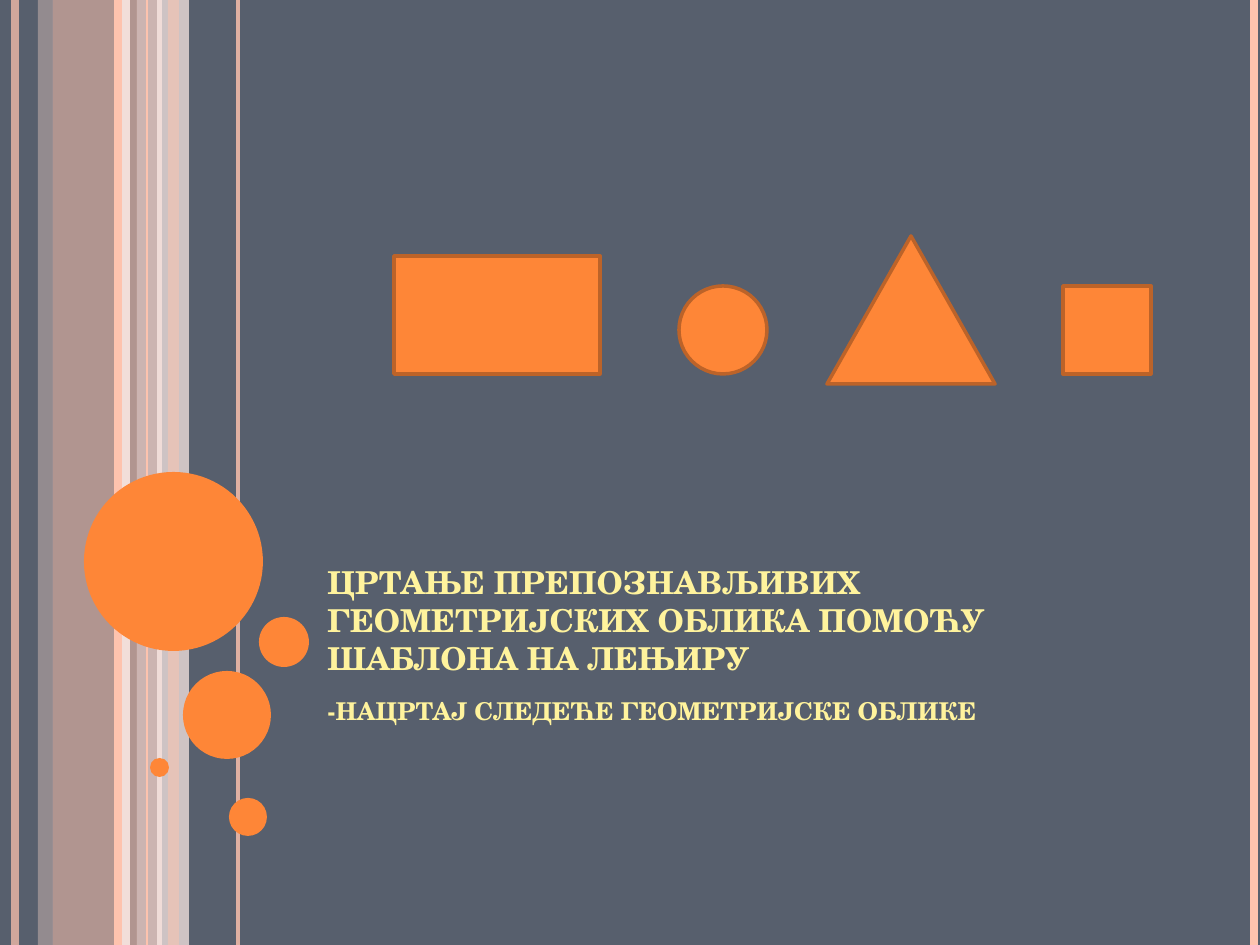
from dataclasses import dataclass
from lxml import etree
from pptx import Presentation
from pptx import util as u
from pptx.dml.color import RGBColor
from pptx.enum import shapes, text
from pptx.oxml.ns import qn

SCALE = 914400 // 126
WIDE, HIGH = 1260, 945
KIND = shapes.MSO_SHAPE


@dataclass(frozen=True)
class Theme:
    back: str = "575F6D"
    rose: str = "FEC3AE"
    blush: str = "FFD9CE"
    pale: str = "FFEDE8"
    orange: str = "FE8637"
    edge: str = "BC6329"
    cream: str = "FFF39D"
    font: str = "TeX Gyre Schola"
    title: int = 18
    body: int = 14


THEME = Theme()


def px(*vals):
    return [u.Emu(v * SCALE) for v in vals]


def paint(fill, color, alpha=100):
    fill.solid()
    fill.fore_color.rgb = RGBColor.from_string(color)
    if alpha < 100:
        tint = fill._xPr.find(".//" + qn("a:srgbClr"))
        etree.SubElement(tint, qn("a:alpha"), val=str(alpha * 1000))


def add_form(slide, kind, box, color, alpha=100, edge=None):
    form = slide.shapes.add_shape(kind, *px(*box))
    form.shadow.inherit = False
    paint(form.fill, color, alpha)
    if edge:
        form.line.width = u.Pt(2)
        paint(form.line.fill, edge)
    else:
        form.line.fill.background()


def add_band(slide, left, width, color, alpha):
    add_form(slide, KIND.RECTANGLE, (left, 0, width, HIGH), color, alpha)


def add_dot(slide, left, top, size):
    add_form(slide, KIND.OVAL, (left, top, size, size), THEME.orange)


def add_rule(slide, x, color, width, alpha=100):
    rule = slide.shapes.add_connector(
        shapes.MSO_CONNECTOR.STRAIGHT, *px(x, 0, x, HIGH))
    rule.line.width = u.Pt(width)
    paint(rule.line.fill, color, alpha)
    etree.SubElement(rule._element.spPr, qn("a:effectLst"))


def add_text(slide, words, box, size, anchor="TOP", before=0):
    frame = slide.shapes.add_textbox(*px(*box)).text_frame
    frame.word_wrap = True
    frame.vertical_anchor = text.MSO_ANCHOR[anchor]
    para = frame.paragraphs[0]
    para.space_before = u.Pt(before)
    run = para.add_run()
    run.text = words
    run.font.name = THEME.font
    run.font.size = u.Pt(size)
    run.font.bold = True
    run.font.color.rgb = RGBColor.from_string(THEME.cream)


def add_decor(slide):
    for band in (
        (53, 84, THEME.rose, 54),
        (38, 15, THEME.blush, 36),
        (137, 25, THEME.blush, 70),
        (157, 32, THEME.pale, 71),
    ):
        add_band(slide, *band)
    for rule in (
        (15, THEME.rose, 4.5, 73),
        (126, THEME.pale, 4.5, 83),
        (118, THEME.rose, 4.5),
        (238, THEME.rose, 2.25, 82),
        (147, THEME.rose, 0.75),
    ):
        add_rule(slide, *rule)
    add_band(slide, 168, 11, THEME.rose, 51)
    for dot in (
        (84, 472, 179),
        (183, 671, 88),
        (150, 758, 19),
        (229, 798, 38),
        (259, 617, 50),
    ):
        add_dot(slide, *dot)
    add_rule(slide, 1254, THEME.rose, 4.5)


def add_forms(slide):
    for kind, box in (
        (KIND.RECTANGLE, (394, 256, 206, 118)),
        (KIND.ISOSCELES_TRIANGLE, (827, 236, 168, 148)),
        (KIND.FLOWCHART_PROCESS, (1063, 286, 88, 88)),
        (KIND.OVAL, (679, 286, 88, 88)),
    ):
        add_form(slide, kind, box, THEME.orange, edge=THEME.edge)


def main():
    deck = Presentation()
    deck.slide_width, deck.slide_height = px(WIDE, HIGH)
    slide = deck.slides.add_slide(deck.slide_layouts[6])
    paint(slide.background.fill, THEME.back)
    add_decor(slide)
    add_text(
        slide,
        "ЦРТАЊЕ ПРЕПОЗНАВЉИВИХ ГЕОМЕТРИЈСКИХ ОБЛИКА ПОМОЋУ ШАБЛОНА НА ЛЕЊИРУ",
        (315, 399, 851, 284), size=THEME.title, anchor="BOTTOM")
    add_text(
        slide, "-НАЦРТАЈ СЛЕДЕЋЕ ГЕОМЕТРИЈСКЕ ОБЛИКЕ",
        (315, 690, 851, 189), size=THEME.body, before=6)
    add_forms(slide)
    deck.save("out.pptx")


if __name__ == "__main__":
    main()
